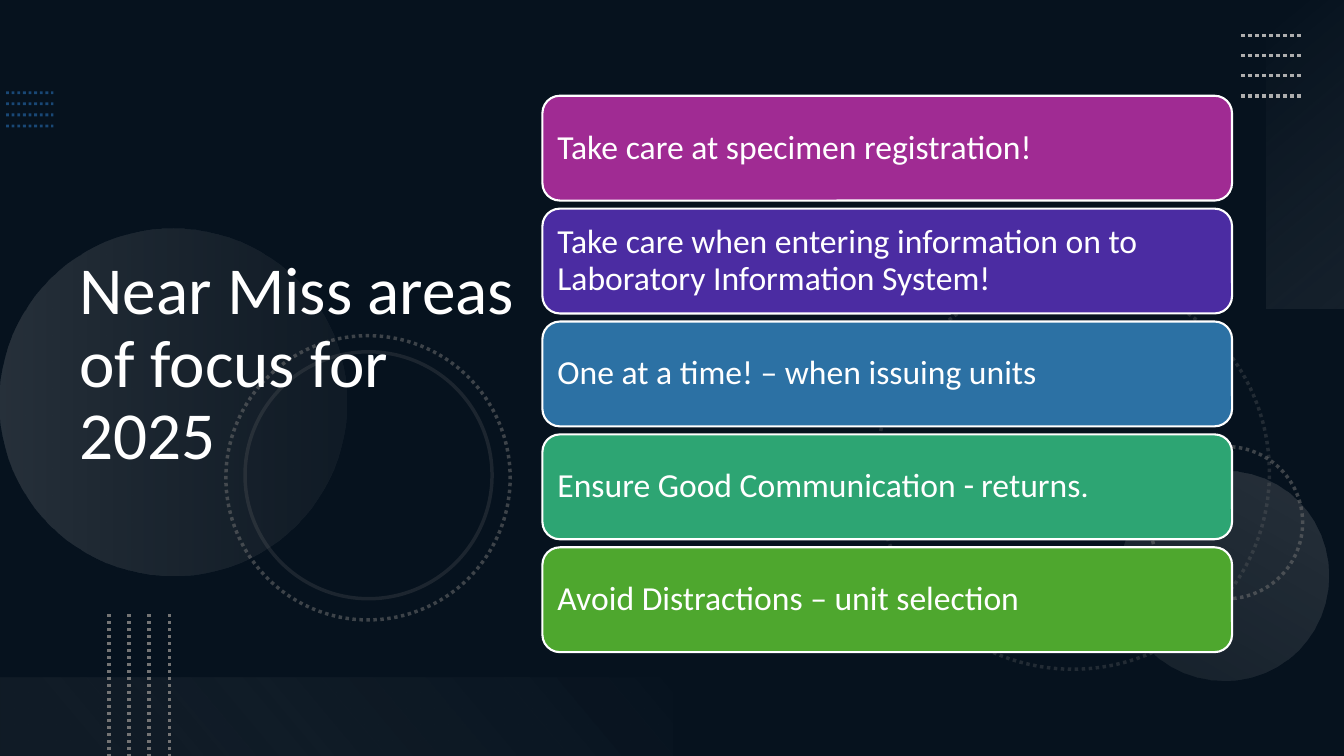
import pptx
import pptx.dml.color
import pptx.dml.fill
import pptx.enum.dml
import pptx.enum.shapes
import pptx.enum.text
import pptx.oxml.ns
import pptx.util
from lxml import etree

Inches, Pt = pptx.util.Inches, pptx.util.Pt
SHAPE = pptx.enum.shapes.MSO_SHAPE
qn = pptx.oxml.ns.qn

# Content: each card has a fill and its runs as (text, font)
TITLE = "Near Miss areas of focus for 2025"
CARDS = [
    ("A02B93", [("Take care at specimen registration!", "Calibri")]),
    ("4B2CA2", [("Take care when entering information on to Laboratory Information System!", "Calibri")]),
    ("2C71A4", [("One at a time! – when issuing units", "Calibri")]),
    ("2DA573", [("Ensure Good Communication", "Calibri"), (" -", "Roboto"),
                (" returns", "Calibri"), (".", "Roboto")]),
    ("4EA72E", [("Avoid Distractions – unit selection", "Calibri")]),
]

# Decoration: rings as left, top, size, rotation, opacity, dotted
RINGS = [
    (8.69, 2.74, 3.9, 75, 25, True),
    (11.41, 4.43, 1.51, 270, 50, True),
    (2.24, 3.33, 2.82, 75, 50, True),
    (2.43, 3.49, 2.45, 75, 20, False),
]
# Gradient shapes: kind, box, rotation, clockwise angle, stops (position, colour, opacity)
GLOWS = [
    (SHAPE.OVAL, (0, 2.27, 3.44, 3.44), 270, 90, [(0, "AEAEAE", 20), (1, "747474", 10)]),
    (SHAPE.OVAL, (11.1, 4.67, 2.08, 2.08), 210, 90, [(0, "AEAEAE", 10), (1, "AEAEAE", 20)]),
    (SHAPE.RECTANGLE, (11.42, 1.14, 3.06, 0.78), 270, 140, [(0, "F6F6F6", 0), (1, "AEAEAE", 10)]),
    (SHAPE.RECTANGLE, (0, 6.72, 6.67, 0.78), 180, 140, [(0.1, "747474", 10), (1, "F1F1F1", 0)]),
]
# Dotted line sets: first start, first end, step between lines, colour, width, opacity
DOT_LINES = [
    ((0.06, 0.92), (0.53, 0.92), (0, 0.11), "2D7FCF", 2, 50),
    ((12.31, 0.35), (12.91, 0.35), (0, 0.2), "AEAEAE", 2.5, 100),
    ((1.08, 6.09), (1.08, 7.5), (0.2, 0), "747474", 2.5, 100),
]
LINES_PER_SET = 4
CARD_LEFT, CARD_TOP, CARD_WIDTH, CARD_HEIGHT, CARD_STEP = 5.38, 0.95, 6.84, 1.04, 1.12


def rgb(value):
    return pptx.dml.color.RGBColor.from_string(value)


def set_opacity(parent, percent):
    if percent < 100:
        color = parent.find(".//" + qn("a:srgbClr"))
        etree.SubElement(color, qn("a:alpha"), val=str(percent * 1000))


def set_line(shape, color, width, dotted=False, opacity=100):
    shape.line.color.rgb = rgb(color)
    shape.line.width = Pt(width)
    if dotted:
        shape.line.dash_style = pptx.enum.dml.MSO_LINE.ROUND_DOT
    set_opacity(shape._element.spPr.find(qn("a:ln")), opacity)


def add_shape(slide, kind, box, rotation=0):
    shape = slide.shapes.add_shape(kind, *map(Inches, box))
    shape.shadow.inherit = False
    shape.rotation = rotation
    return shape


def write_text(frame, runs, size, margins):
    frame_format = {
        "word_wrap": True,
        "vertical_anchor": pptx.enum.text.MSO_ANCHOR.MIDDLE,
        **{f"margin_{side}": Inches(value) for side, value in margins.items()},
    }
    for name, value in frame_format.items():
        setattr(frame, name, value)
    paragraph = frame.paragraphs[0]
    paragraph.alignment = pptx.enum.text.PP_ALIGN.LEFT
    paragraph.line_spacing = 0.9
    for text, font in runs:
        run = paragraph.add_run()
        run.text = text
        for name, value in {"name": font, "size": Pt(size)}.items():
            setattr(run.font, name, value)
        run.font.color.rgb = rgb("FFFFFF")


def add_glow(slide, kind, box, rotation, angle, stops):
    shape = add_shape(slide, kind, box, rotation)
    shape.line.fill.background()
    shape.fill.gradient()
    shape.fill.gradient_angle = 360 - angle
    for stop, (position, color, _) in zip(shape.fill.gradient_stops, stops):
        stop.position = position
        stop.color.rgb = rgb(color)
    elements = shape._element.spPr.iter(qn("a:gs"))
    for element, (_, _, opacity) in zip(elements, stops):
        set_opacity(element, opacity)


def add_dot_lines(slide, start, end, step, color, width, opacity):
    for index in range(LINES_PER_SET):
        points = [Inches(value + index * move)
                  for point in (start, end) for value, move in zip(point, step)]
        line = slide.shapes.add_connector(pptx.enum.shapes.MSO_CONNECTOR.STRAIGHT, *points)
        set_line(line, color, width, True, opacity)
        etree.SubElement(line._element.spPr, qn("a:effectLst"))


def main():
    presentation = pptx.Presentation()
    presentation.slide_width, presentation.slide_height = Inches(13.33), Inches(7.5)
    slide = presentation.slides.add_slide(presentation.slide_layouts[6])

    # Background and dark overlay
    slide.background.fill.solid()
    slide.background.fill.fore_color.rgb = rgb("0E2841")
    overlay = add_shape(slide, SHAPE.RECTANGLE, (0, 0, 13.33, 7.5))
    overlay.fill.solid()
    overlay.fill.fore_color.rgb = rgb("000000")
    overlay.line.fill.background()
    set_opacity(overlay._element.spPr.find(qn("a:solidFill")), 53)

    # Decoration
    for glow in GLOWS:
        add_glow(slide, *glow)
    for left, top, size, rotation, opacity, dotted in RINGS:
        ring = add_shape(slide, SHAPE.OVAL, (left, top, size, size), rotation)
        ring.fill.background()
        set_line(ring, "747474", 2.5, dotted, opacity)
    for line_set in DOT_LINES:
        add_dot_lines(slide, *line_set)

    # Title
    title = slide.shapes.add_textbox(*map(Inches, (0.69, 0.54, 4.59, 6.17)))
    write_text(title.text_frame, [(TITLE, "Calibri")], 48,
               {"left": 0.1, "right": 0.1, "top": 0.05, "bottom": 0.05})

    # Cards
    for index, (color, runs) in enumerate(CARDS):
        top = CARD_TOP + index * CARD_STEP
        card = add_shape(slide, SHAPE.ROUNDED_RECTANGLE, (CARD_LEFT, top, CARD_WIDTH, CARD_HEIGHT))
        card.fill.solid()
        card.fill.fore_color.rgb = rgb(color)
        set_line(card, "FFFFFF", 1.5)
        write_text(card.text_frame, runs, 24,
                   dict.fromkeys(("left", "right", "top", "bottom"), 0.1))

    presentation.save("out.pptx")


if __name__ == "__main__":
    main()
